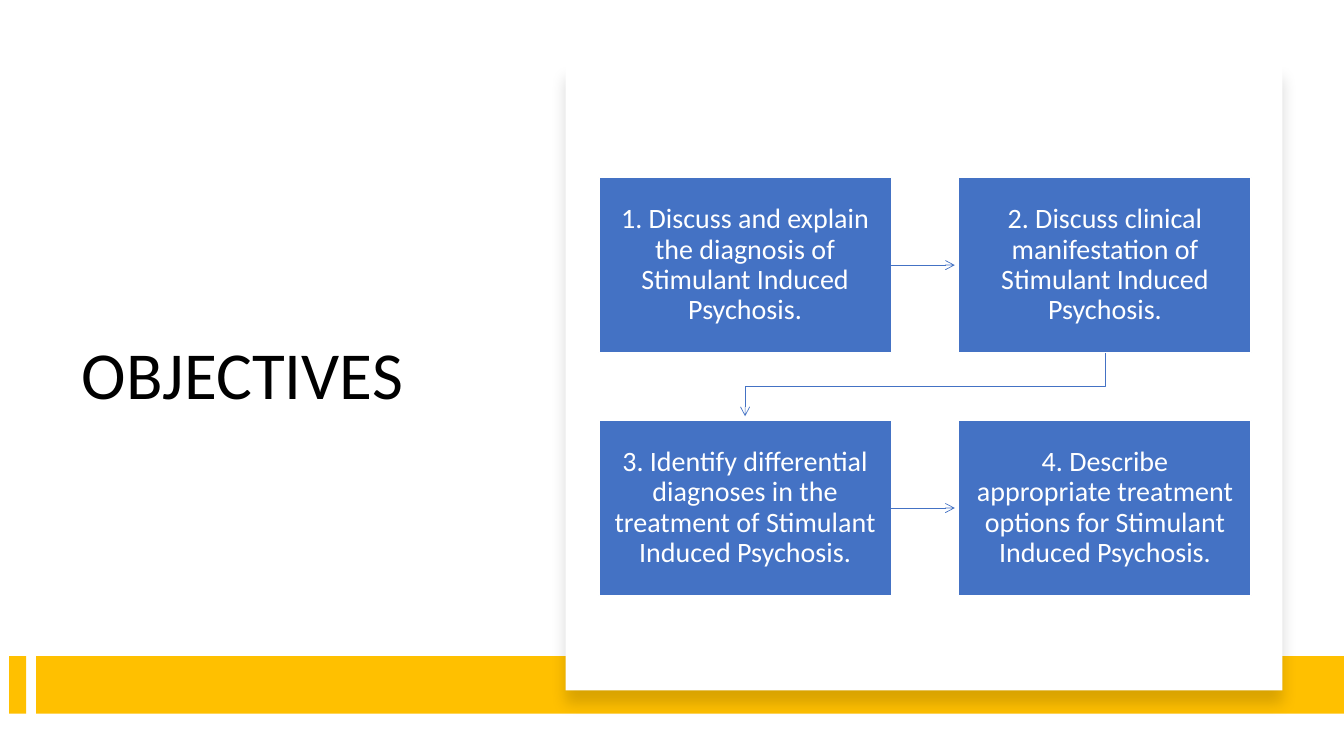
from pptx import Presentation
from pptx.dml.color import RGBColor
from pptx.enum.shapes import MSO_CONNECTOR, MSO_SHAPE
from pptx.enum.text import MSO_ANCHOR, MSO_AUTO_SIZE, PP_ALIGN
from pptx.oxml.ns import qn
from pptx.util import Pt
from lxml.etree import SubElement

COLORS = {"white": "FFFFFF", "black": "000000", "blue": "4472C4", "gold": "FFC000"}
EMU_PER_PX = 9144
BOX_WIDTH, BOX_HEIGHT = 290, 174
COLUMNS, ROWS = (594, 951), (176, 417)
ARROW_GAP = 4
OBJECTIVES = (
    "1. Discuss and explain the diagnosis of Stimulant Induced Psychosis.",
    "2. Discuss clinical manifestation of Stimulant Induced Psychosis.",
    "3. Identify differential diagnoses in the treatment of Stimulant Induced Psychosis.",
    "4. Describe appropriate treatment options for Stimulant Induced Psychosis.",
)


def px(length):
    return length * EMU_PER_PX


def color(name):
    return RGBColor.from_string(COLORS[name])


def assign(target, values):
    for name, value in values.items():
        setattr(target, name, value)


class ObjectivesPage:
    font = "Calibri"

    def __init__(self, deck):
        self.page = deck.slides.add_slide(deck.slide_layouts[5])

    def fill_text(self, box, text, size, ink, align, margins):
        frame = box.text_frame
        assign(frame, {
            "text": text,
            "word_wrap": True,
            "auto_size": MSO_AUTO_SIZE.NONE,
            "vertical_anchor": MSO_ANCHOR.MIDDLE,
        })
        for side, margin in zip(("left", "top", "right", "bottom"), margins):
            setattr(frame, f"margin_{side}", px(margin))
        para = frame.paragraphs[0]
        assign(para, {"alignment": align, "line_spacing": 0.9})
        span = para.runs[0]
        assign(span.font, {"name": self.font, "size": Pt(size)})
        span.font.color.rgb = color(ink)

    def title(self, text, left, top, width, height):
        title = self.page.shapes.title
        assign(title, {"left": px(left), "top": px(top),
                       "width": px(width), "height": px(height)})
        self.fill_text(title, text, 48, "black", PP_ALIGN.LEFT, (10, 5, 10, 5))

    def block(self, left, top, width, height, fill):
        block = self.page.shapes.add_shape(
            MSO_SHAPE.RECTANGLE, px(left), px(top), px(width), px(height))
        block.shadow.inherit = False
        block.fill.solid()
        block.fill.fore_color.rgb = color(fill)
        block.line.fill.background()
        return block

    def panel(self, left, top, width, height):
        panel = self.block(left, top, width, height, "white")
        effects = panel._element.spPr.find(qn("a:effectLst"))
        shadow = SubElement(effects, qn("a:outerShdw"), blurRad=str(Pt(11)),
                            dist=str(Pt(10)), dir="5400000", rotWithShape="0")
        tint = SubElement(shadow, qn("a:srgbClr"), val=COLORS["black"])
        SubElement(tint, qn("a:alpha"), val="15000")

    def objective(self, text, left, top):
        box = self.block(left, top, BOX_WIDTH, BOX_HEIGHT, "blue")
        box.line.color.rgb = color("white")
        box.line.width = Pt(1)
        self.fill_text(box, text, 20, "white", PP_ALIGN.CENTER, (14, 15, 14, 15))

    def finish_arrow(self, arrow):
        arrow.line.color.rgb = color("blue")
        arrow.line.width = Pt(0.5)
        outline = arrow._element.spPr.find(qn("a:ln"))
        SubElement(outline, qn("a:tailEnd"), type="arrow")

    def arrow(self, start, end):
        arrow = self.page.shapes.add_connector(
            MSO_CONNECTOR.STRAIGHT, *map(px, start + end))
        self.finish_arrow(arrow)
        SubElement(arrow._element.spPr, qn("a:effectLst"))

    def bent_arrow(self, start, *points):
        builder = self.page.shapes.build_freeform(*start, scale=EMU_PER_PX)
        builder.add_line_segments(points, close=False)
        arrow = builder.convert_to_shape()
        arrow.fill.background()
        self.finish_arrow(arrow)
        arrow.shadow.inherit = False


def main():
    deck = Presentation()
    assign(deck, {"slide_width": px(1333), "slide_height": px(750)})
    page = ObjectivesPage(deck)

    page.title("OBJECTIVES", 71, 120, 415, 510)
    for left, width in ((9, 17), (36, 1297)):
        page.block(left, 651, width, 57, "gold")
    page.panel(561, 64, 711, 621)

    places = [(left, top) for top in ROWS for left in COLUMNS]
    for text, place in zip(OBJECTIVES, places):
        page.objective(text, *place)

    for top in ROWS:
        middle = top + BOX_HEIGHT // 2
        page.arrow((COLUMNS[0] + BOX_WIDTH, middle), (COLUMNS[1] - ARROW_GAP, middle))

    first, second = (left + BOX_WIDTH // 2 for left in COLUMNS)
    bottom = ROWS[0] + BOX_HEIGHT
    turn = (bottom + ROWS[1]) // 2
    page.bent_arrow((second, bottom), (second, turn), (first, turn),
                    (first, ROWS[1] - ARROW_GAP))

    deck.save("out.pptx")


if __name__ == "__main__":
    main()
